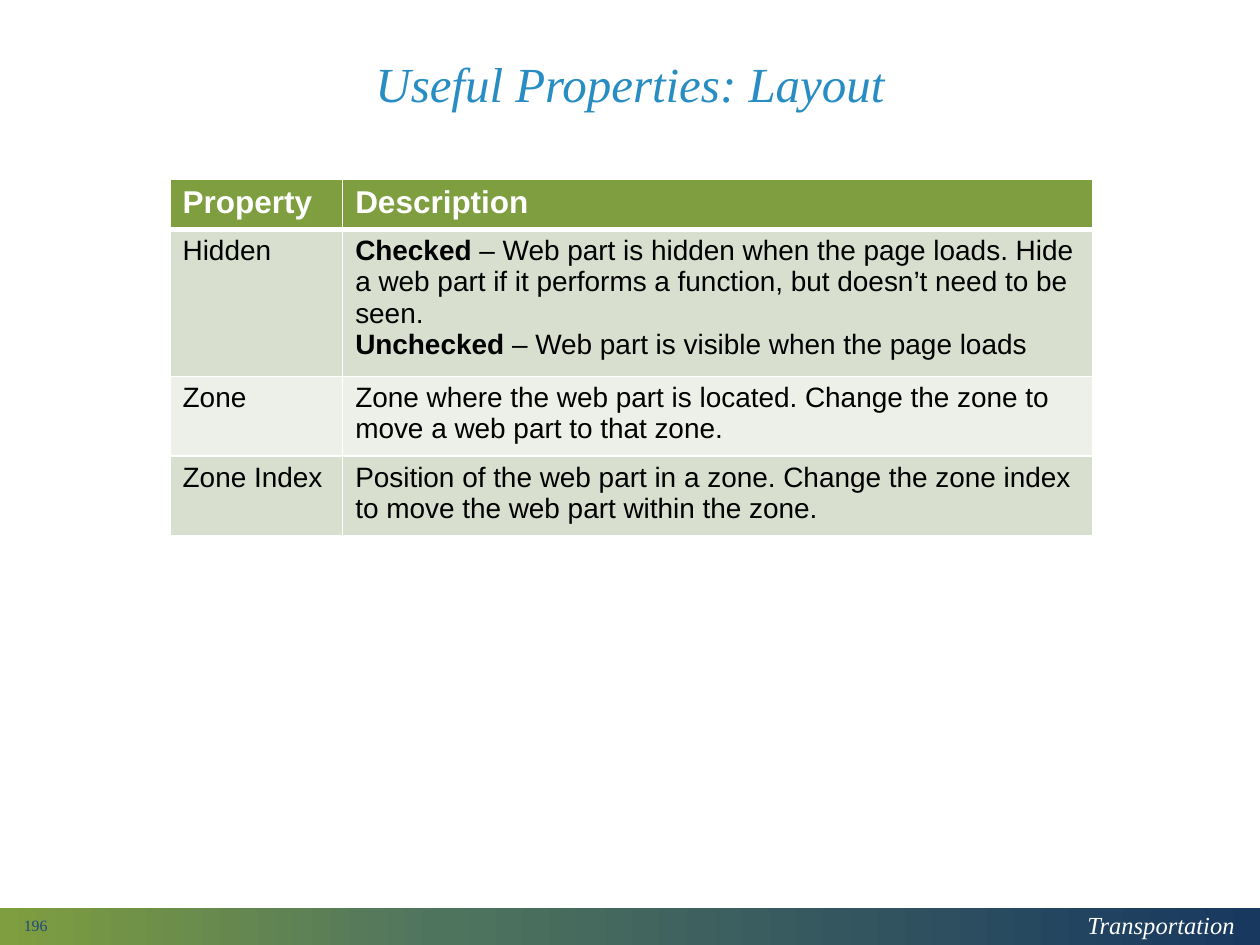
from copy import deepcopy

from lxml.etree import SubElement
from pptx import Presentation
from pptx.dml.color import RGBColor
from pptx.enum.shapes import MSO_SHAPE
from pptx.enum.text import MSO_ANCHOR as Anchor, PP_ALIGN as Align
from pptx.oxml.ns import qn
from pptx.util import Inches, Pt

# Content: a cell is a list of paragraphs, a paragraph a list of (text, bold) runs
TITLE = "Useful Properties: Layout"
FOOTER = "Transportation"
PAGE = "196"
HEADER = ["Property", "Description"]
PROPERTIES = [
    ("Hidden", [
        [("Checked", True), (" – Web part is hidden when the page loads. Hide a web part "
                             "if it performs a function, but doesn’t need to be seen.", False)],
        [("Unchecked", True), (" – Web part is visible when the page loads", False)],
    ]),
    ("Zone", [[("Zone where the web part is located. Change the zone to move "
                "a web part to that zone.", False)]]),
    ("Zone Index", [[("Position of the web part in a zone. Change the zone index "
                      "to move the web part within the zone.", False)]]),
]

# Style
COLORS = {"title": "288DC2", "page": "1F497D", "white": "FFFFFF", "black": "000000",
          "header": "7F9E3F", "odd": "D8DFCF", "even": "ECF0E8"}
BAR_STOPS = [(0, "7F9E3F"), (0.35, "4F745E"), (1, "183860")]
SERIF, SANS = "Times New Roman", "Arial"
TITLE_FONT = {"name": SERIF, "size": Pt(28), "italic": True}
FOOTER_FONT = {"name": SERIF, "size": Pt(14), "italic": True}
PAGE_FONT = {"name": SERIF, "size": Pt(9)}
HEADER_FONT = {"name": SANS, "size": Pt(18)}
BODY_FONT = {"name": SANS, "size": Pt(16)}

# Layout in inches
WIDTH, HEIGHT = 10, 7.5
TABLE_LEFT, TABLE_TOP = 1.35, 1.42
COLUMNS = [1.37, 5.95]
ROWS = [0.4, 1.09, 0.59, 0.59]


def place(shape, left, top, width, height):
    shape.left, shape.top = Inches(left), Inches(top)
    shape.width, shape.height = Inches(width), Inches(height)


def add_run(paragraph, text, formats, color, bold=False):
    run = paragraph.add_run()
    run.text = text
    for name, value in formats.items():
        setattr(run.font, name, value)
    run.font.bold = bold
    run.font.color.rgb = RGBColor.from_string(COLORS[color])


def add_label(slide, text, box, formats, color, align, anchor):
    label = slide.shapes.add_textbox(*map(Inches, box))
    frame = label.text_frame
    frame.word_wrap = True
    frame.vertical_anchor = anchor
    frame.paragraphs[0].alignment = align
    add_run(frame.paragraphs[0], text, formats, color)


def set_borders(cell, widths):
    properties = cell._tc.get_or_add_tcPr()
    for side, points in widths.items():
        line = SubElement(properties, qn(f"a:ln{side}"), w=str(Pt(points)))
        SubElement(SubElement(line, qn("a:solidFill")), qn("a:srgbClr"), val=COLORS["white"])


def fill_cell(cell, paragraphs, formats, color, fill, widths):
    set_borders(cell, widths)
    cell.fill.solid()
    cell.fill.fore_color.rgb = RGBColor.from_string(COLORS[fill])
    frame = cell.text_frame
    for index, runs in enumerate(paragraphs):
        paragraph = frame.add_paragraph() if index else frame.paragraphs[0]
        for text, bold in runs:
            add_run(paragraph, text, formats, color, bold)


def add_footer_bar(slide):
    bar = slide.shapes.add_shape(MSO_SHAPE.RECTANGLE, 0, Inches(7.21),
                                 Inches(WIDTH), Inches(HEIGHT - 7.21))
    bar.shadow.inherit = False
    bar.line.fill.background()
    bar.fill.gradient()
    bar.fill.gradient_angle = 0
    # The default gradient has two stops; a third goes between them
    first = bar.element.spPr.find(f".//{qn('a:gs')}")
    first.addnext(deepcopy(first))
    for stop, (position, color) in zip(bar.fill.gradient_stops, BAR_STOPS):
        stop.position = position
        stop.color.rgb = RGBColor.from_string(color)


def add_property_table(slide):
    table = slide.shapes.add_table(
        len(ROWS), len(COLUMNS), Inches(TABLE_LEFT), Inches(TABLE_TOP),
        Inches(sum(COLUMNS)), Inches(sum(ROWS))).table
    for column, width in zip(table.columns, COLUMNS):
        column.width = Inches(width)
    for row, height in zip(table.rows, ROWS):
        row.height = Inches(height)

    for index, text in enumerate(HEADER):
        fill_cell(table.cell(0, index), [[(text, True)]], HEADER_FONT, "white", "header",
                  {"L": 1, "R": 1, "T": 1, "B": 3})
    for row, (name, description) in enumerate(PROPERTIES, start=1):
        widths = {"L": 1, "R": 1, "T": 3 if row == 1 else 1, "B": 1}
        fill = "odd" if row % 2 else "even"
        for index, paragraphs in enumerate([[[(name, False)]], description]):
            fill_cell(table.cell(row, index), paragraphs, BODY_FONT, "black", fill, widths)


def main():
    presentation = Presentation()
    presentation.slide_width, presentation.slide_height = Inches(WIDTH), Inches(HEIGHT)
    slide = presentation.slides.add_slide(presentation.slide_layouts[5])

    # Footer
    add_footer_bar(slide)
    add_label(slide, FOOTER, (8.41, 7.17, 1.61, 0.34), FOOTER_FONT, "white",
              Align.CENTER, Anchor.TOP)
    add_label(slide, PAGE, (0.09, 7.27, 2.25, 0.15), PAGE_FONT, "page",
              Align.LEFT, Anchor.MIDDLE)

    # Title
    title = slide.shapes.title
    place(title, 0.69, 0.11, 8.62, 1.16)
    title.text_frame.vertical_anchor = Anchor.MIDDLE
    paragraph = title.text_frame.paragraphs[0]
    paragraph.alignment = Align.CENTER
    paragraph.line_spacing = 0.9
    add_run(paragraph, TITLE, TITLE_FONT, "title")

    add_property_table(slide)
    presentation.save("out.pptx")


if __name__ == "__main__":
    main()
